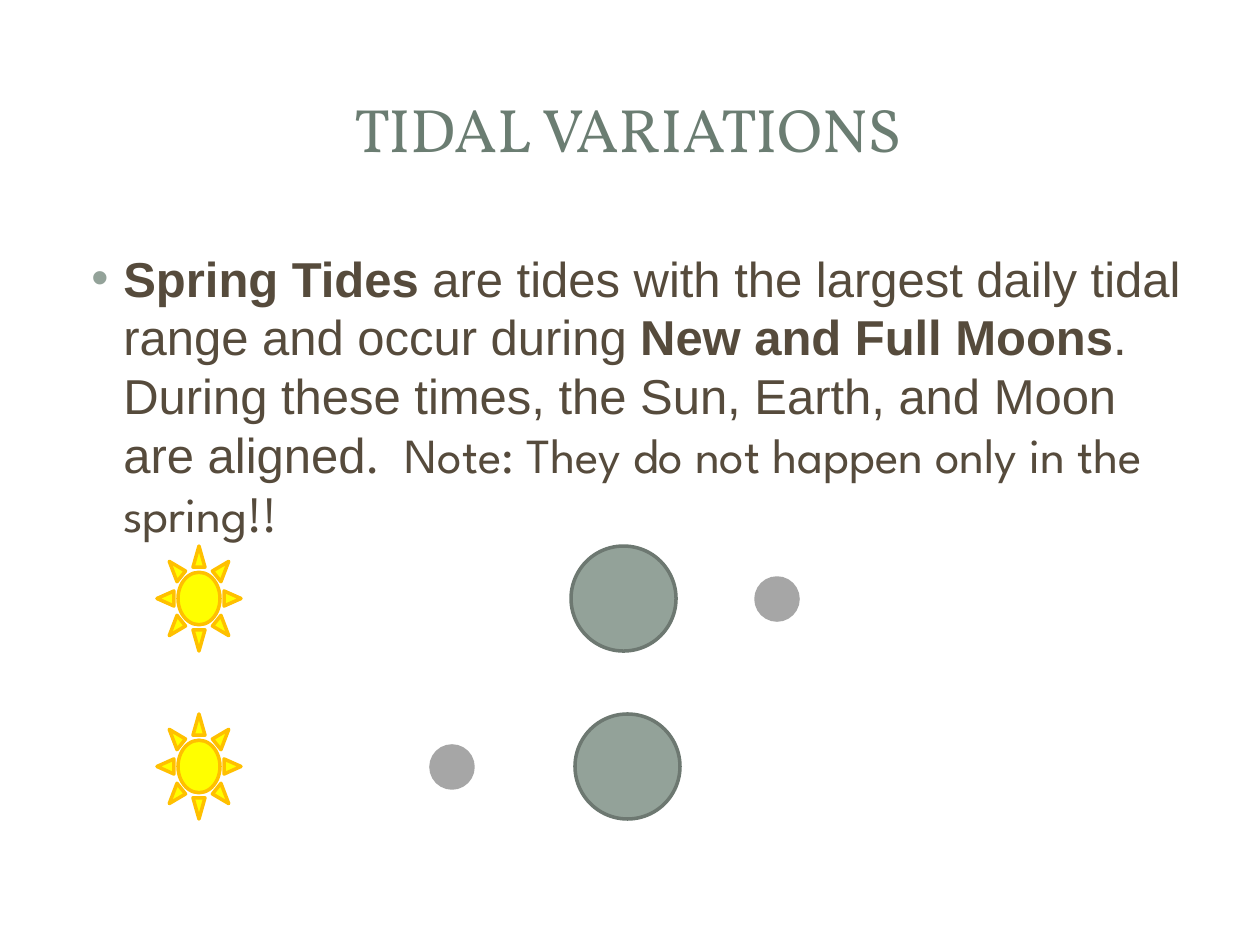
import pptx
import pptx.util
import pptx.dml.color
import pptx.enum.shapes
import pptx.enum.text
import lxml.etree

RGB = pptx.dml.color.RGBColor
SHAPE = pptx.enum.shapes.MSO_SHAPE
WHITE = RGB(0xFF, 0xFF, 0xFF)
PINE = RGB(0x6B, 0x7D, 0x72)
BROWN = RGB(0x56, 0x4B, 0x3C)
SAGE = RGB(0x93, 0xA2, 0x99)
MOSS = RGB(0x6D, 0x78, 0x71)
GRAY = RGB(0xA6, 0xA6, 0xA6)
YELLOW = RGB(0xFF, 0xFF, 0x00)
AMBER = RGB(0xFF, 0xC0, 0x00)
SCALE = 914400 / 126


def px(n):
    return pptx.util.Emu(round(n * SCALE))


def add_frame(slide, box, anchor):
    frame = slide.shapes.add_textbox(*map(px, box)).text_frame
    frame.word_wrap = True
    frame.vertical_anchor = anchor
    return frame


def add_run(para, text, font, size, color, bold=False):
    run = para.add_run()
    run.text = text
    run.font.name = font
    run.font.size = pptx.util.Pt(size)
    run.font.color.rgb = color
    run.font.bold = bold


def add_bullet(para, sign, color, left, hang):
    props = para._p.get_or_add_pPr()
    props.set("marL", str(px(left)))
    props.set("indent", str(-px(hang)))
    space = "{http://schemas.openxmlformats.org/drawingml/2006/main}"
    tint = lxml.etree.SubElement(props, space + "buClr")
    lxml.etree.SubElement(tint, space + "srgbClr", val=str(color))
    lxml.etree.SubElement(props, space + "buFont", typeface="Arial")
    lxml.etree.SubElement(props, space + "buChar", char=sign)


def add_title(slide, box):
    para = add_frame(slide, box, pptx.enum.text.MSO_ANCHOR.MIDDLE).paragraphs[0]
    para.alignment = pptx.enum.text.PP_ALIGN.CENTER
    add_run(para, "TIDAL VARIATIONS", "Vollkorn", 35, PINE)


def add_body(slide, box):
    para = add_frame(slide, box, pptx.enum.text.MSO_ANCHOR.TOP).paragraphs[0]
    add_bullet(para, "•", SAGE, 48, 32)
    for text, font, bold in (
        ("Spring Tides ", "Arial", True),
        ("are tides with the largest daily tidal range and occur during ", "Arial", False),
        ("New and Full Moons", "Arial", True),
        (". During these times, the Sun, Earth, and Moon are aligned", "Arial", False),
        (".  Note: They do not happen only in the spring!!", "League Spartan", False),
    ):
        add_run(para, text, font, 28, BROWN, bold)


def add_orb(slide, kind, box, fill, line):
    orb = slide.shapes.add_shape(kind, *map(px, box))
    orb.shadow.inherit = False
    orb.fill.solid()
    orb.fill.fore_color.rgb = fill
    orb.line.color.rgb = line
    orb.line.width = pptx.util.Pt(2)


def add_row(slide, box, earth, moon):
    left, top, wide, high = box
    small = 42
    drop = (high - small + 1) // 2
    add_orb(slide, SHAPE.OVAL, (left + earth, top, high, high), SAGE, MOSS)
    add_orb(slide, SHAPE.OVAL, (left + moon, top + drop, small, small), GRAY, GRAY)
    add_orb(slide, SHAPE.SUN, (left, top, wide, high), YELLOW, AMBER)


def main():
    deck = pptx.Presentation()
    deck.slide_width, deck.slide_height = px(1260), px(945)
    slide = deck.slides.add_slide(deck.slide_layouts[6])
    slide.background.fill.solid()
    slide.background.fill.fore_color.rgb = WHITE
    add_title(slide, (59, 56, 1138, 144))
    add_body(slide, (63, 242, 1134, 602))
    add_row(slide, (157, 546, 84, 105), 414, 599)
    add_row(slide, (157, 714, 84, 105), 418, 274)
    deck.save("out.pptx")


if __name__ == "__main__":
    main()
